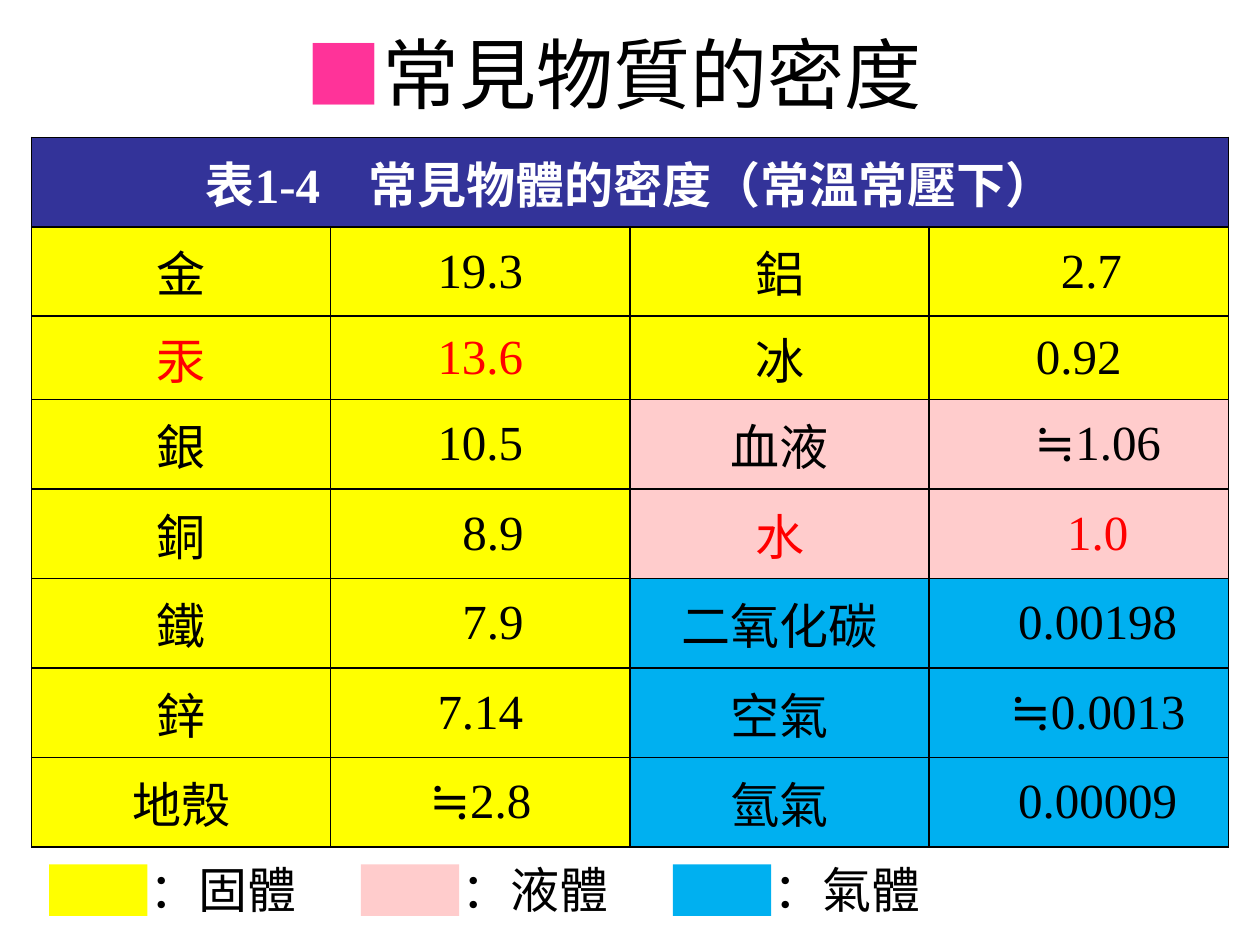
"""Build a slide with a table of common densities and a colour legend."""
from typing import NamedTuple

from pptx import Presentation
from pptx.dml.color import RGBColor
from pptx.enum.shapes import MSO_SHAPE as Shape
from pptx.enum.text import MSO_ANCHOR as Anchor, MSO_AUTO_SIZE as AutoSize, PP_ALIGN as Align
from pptx.oxml import parse_xml
from pptx.oxml.ns import nsdecls
from pptx.util import Inches, Pt

SOLID, LIQUID, GAS = "FFFF00", "FFCCCC", "00B0F0"
BLACK, RED, WHITE, NAVY, PINK = "000000", "FF0000", "FFFFFF", "333399", "FF3399"
SERIF = "Times New Roman"
SPACE = 0.1


class Substance(NamedTuple):
    name: str
    density: str
    state: str = SOLID
    color: str = BLACK
    indent: int = 0


class LegendEntry(NamedTuple):
    label: str
    state: str


LEFT_SUBSTANCES = [
    Substance("金", "19.3"),
    Substance("汞", "13.6", color=RED),
    Substance("銀", "10.5"),
    Substance("銅", "8.9", indent=2),
    Substance("鐵", "7.9", indent=2),
    Substance("鋅", "7.14"),
    Substance("地殼", "≒2.8"),
]
RIGHT_SUBSTANCES = [
    Substance("鋁", "2.7", indent=2),
    Substance("冰", "0.92"),
    Substance("血液", "≒1.06", LIQUID, indent=3),
    Substance("水", "1.0", LIQUID, RED, 3),
    Substance("二氧化碳", "0.00198", GAS, indent=3),
    Substance("空氣", "≒0.0013", GAS, indent=3),
    Substance("氫氣", "0.00009", GAS, indent=3),
]
LEGEND = [
    LegendEntry("：固體", SOLID),
    LegendEntry("：液體", LIQUID),
    LegendEntry("：氣體", GAS),
]


def set_color(color_format, color: str) -> None:
    color_format.rgb = RGBColor.from_string(color)


def set_fill(item, color: str) -> None:
    item.fill.solid()
    set_color(item.fill.fore_color, color)


def add_text(frame, text: str, *, size: float = 28, font: str = SERIF, color: str = BLACK,
             bold: bool = False, align: Align = Align.CENTER) -> None:
    paragraph = frame.paragraphs[0]
    paragraph.alignment = align
    run = paragraph.add_run()
    run.text = text
    run.font.size, run.font.name, run.font.bold = Pt(size), font, bold
    set_color(run.font.color, color)


def add_borders(cell) -> None:
    properties = cell._tc.get_or_add_tcPr()
    for side in ("lnL", "lnR", "lnT", "lnB"):
        properties.append(parse_xml(
            f'<a:{side} {nsdecls("a")} w="{Pt(1)}"><a:solidFill>'
            f'<a:srgbClr val="{BLACK}"/></a:solidFill></a:{side}>'))


def fill_cell(cell, text: str, fill: str, *, indent: int = 0, **text_format) -> None:
    cell.vertical_anchor = Anchor.MIDDLE
    cell.margin_left = Inches(0.1 + indent * SPACE)
    set_fill(cell, fill)
    add_text(cell.text_frame, text, **text_format)


def add_title(slide) -> None:
    title = slide.shapes.title
    title.left, title.top = Inches(1.19), Inches(0.28)
    title.width, title.height = Inches(7.36), Inches(0.6)
    frame = title.text_frame
    frame.auto_size = AutoSize.NONE
    frame.vertical_anchor = Anchor.MIDDLE
    add_text(frame, "■", size=44, font="Arial", color=PINK)
    add_text(frame, "常見物質的密度", size=44, font="Arial")


def add_density_table(slide) -> None:
    row_count = len(LEFT_SUBSTANCES) + 1
    table = slide.shapes.add_table(row_count, 4, Inches(0.25), Inches(1.09),
                                   Inches(9.5), Inches(5.63)).table
    table.first_row = table.horz_banding = False
    for column in table.columns:
        column.width = Inches(9.5 / 4)
    for index, row in enumerate(table.rows):
        row.height = Inches(0.66 if index == 2 else 0.71)
    for cell in table.iter_cells():
        add_borders(cell)
    heading = table.cell(0, 0)
    heading.merge(table.cell(0, 3))
    fill_cell(heading, "表1-4　常見物體的密度（常溫常壓下）", NAVY, color=WHITE, bold=True)
    for first_column, substances in ((0, LEFT_SUBSTANCES), (2, RIGHT_SUBSTANCES)):
        for row, item in enumerate(substances, start=1):
            fill_cell(table.cell(row, first_column), item.name, item.state, color=item.color)
            fill_cell(table.cell(row, first_column + 1), item.density, item.state,
                      indent=item.indent, color=item.color)


def add_legend_entry(slide, entry: LegendEntry, left: float) -> None:
    group = slide.shapes.add_group_shape()
    swatch = group.shapes.add_shape(Shape.RECTANGLE, Inches(left), Inches(6.86),
                                    Inches(0.78), Inches(0.41))
    swatch.shadow.inherit = False
    set_fill(swatch, entry.state)
    swatch.line.fill.background()
    label = group.shapes.add_textbox(Inches(left + 0.7), Inches(6.77),
                                     Inches(1.38), Inches(0.57))
    label.text_frame.word_wrap = False
    add_text(label.text_frame, entry.label, align=Align.LEFT)


def main() -> None:
    presentation = Presentation()
    presentation.slide_width, presentation.slide_height = Inches(10), Inches(7.5)
    slide = presentation.slides.add_slide(presentation.slide_layouts[5])
    add_title(slide)
    add_density_table(slide)
    for index, entry in enumerate(LEGEND):
        add_legend_entry(slide, entry, 0.39 + index * 2.475)
    presentation.save("out.pptx")


if __name__ == "__main__":
    main()
